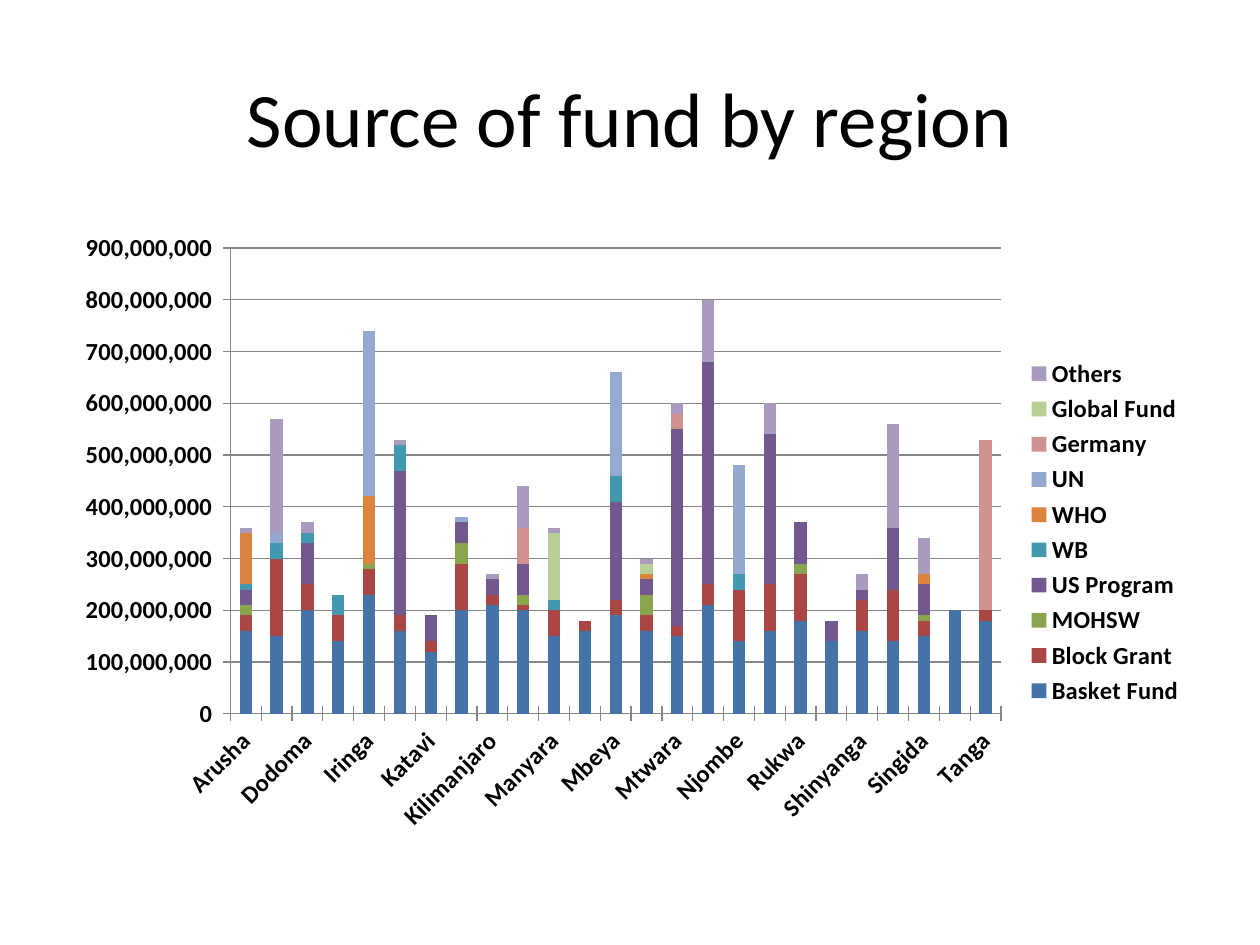
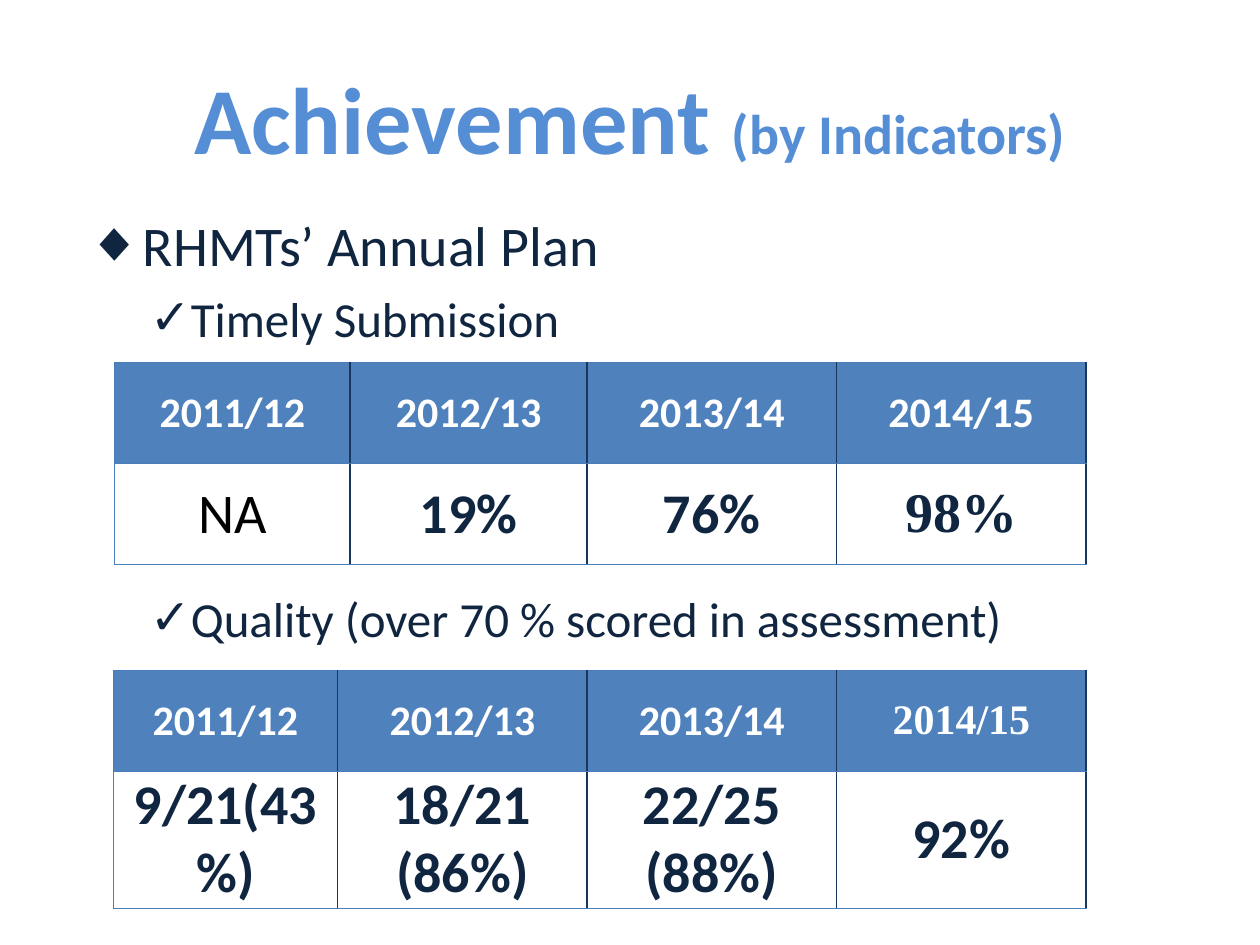
from lxml import etree
from pptx import Presentation
from pptx.chart.data import CategoryChartData
from pptx.dml.color import RGBColor
from pptx.enum.chart import XL_CHART_TYPE, XL_LEGEND_POSITION, XL_TICK_MARK
from pptx.enum.text import MSO_ANCHOR, MSO_AUTO_SIZE, PP_ALIGN
from pptx.oxml.ns import qn
from pptx.util import Emu, Pt

STACKED = XL_CHART_TYPE.COLUMN_STACKED
RIGHT = XL_LEGEND_POSITION.RIGHT
CROSS = XL_TICK_MARK.CROSS
MIDDLE = MSO_ANCHOR.MIDDLE
NO_AUTOFIT = MSO_AUTO_SIZE.NONE
CENTER = PP_ALIGN.CENTER

PX = 9144  # 100 px to the inch
SANS, SERIF = "Calibri", "Times New Roman"
COLORS = {
    "black": "000000", "white": "FFFFFF", "navy": "10253F", "sky": "558ED5",
    "header": "4F81BD", "edge": "4A7EBB", "divider": "17375E", "grid": "868686",
    "Basket Fund": "4572A7", "Block Grant": "AA4643", "MOHSW": "89A54E",
    "US Program": "71588F", "WB": "4198AF", "WHO": "DB843D", "UN": "93A9CF",
    "Germany": "D19392", "Global Fund": "B9CD96", "Others": "A99BBD",
}


def place(box, left, top, width, height):
    box.left, box.top, box.width, box.height = (
        Emu(n * PX) for n in (left, top, width, height))


def add_span(para, text, size, color, bold=False, font=SANS):
    span = para.add_run()
    span.text = text
    span.font.size = Pt(size)
    span.font.bold = bold
    span.font.name = font
    span.font.color.rgb = RGBColor.from_string(COLORS[color])


deck = Presentation()
deck.slide_width, deck.slide_height = Emu(1000 * PX), Emu(750 * PX)

# Both pages share the title position; only the spans differ.
page_titles = [
    ("Title Only", [("Source of fund by region", 44, "black", False)]),
    ("Title and Content", [("Achievement ", 54, "sky", True),
                           ("(by Indicators)", 32, "sky", True)]),
]
pages = []
for layout, spans in page_titles:
    page = deck.slides.add_slide(deck.slide_layouts.get_by_name(layout))
    title = page.shapes.title
    place(title, 50, 30, 900, 125)
    title.text_frame.vertical_anchor = MIDDLE
    title.text_frame.auto_size = NO_AUTOFIT
    para = title.text_frame.paragraphs[0]
    para.alignment = CENTER
    for span in spans:
        add_span(para, *span)
    pages.append(page)
fund_page, achievement_page = pages

# Funding in millions; a region without an entry received nothing from that fund.
MILLION = 1_000_000
regions = [
    "Arusha", "Dar es Salaam", "Dodoma", "Geita", "Iringa", "Kagera", "Katavi",
    "Kigoma", "Kilimanjaro", "Lindi", "Manyara", "Mara", "Mbeya", "Morogoro",
    "Mtwara", "Mwanza", "Njombe", "Pwani", "Rukwa", "Ruvuma", "Shinyanga",
    "Simiyu", "Singida", "Tabora", "Tanga",
]
# Each fund lists its amounts with the regions that received them.
funds = {
    "Basket Fund": {
        120: ["Katavi"],
        140: ["Geita", "Njombe", "Ruvuma", "Simiyu"],
        150: ["Dar es Salaam", "Manyara", "Mtwara", "Singida"],
        160: ["Arusha", "Kagera", "Mara", "Morogoro", "Pwani", "Shinyanga"],
        180: ["Rukwa", "Tanga"],
        190: ["Mbeya"],
        200: ["Dodoma", "Kigoma", "Lindi", "Tabora"],
        210: ["Kilimanjaro", "Mwanza"],
        230: ["Iringa"],
    },
    "Block Grant": {
        10: ["Lindi"],
        20: ["Katavi", "Kilimanjaro", "Mara", "Mtwara", "Tanga"],
        30: ["Arusha", "Kagera", "Mbeya", "Morogoro", "Singida"],
        40: ["Mwanza"],
        50: ["Dodoma", "Geita", "Iringa", "Manyara"],
        60: ["Shinyanga"],
        90: ["Kigoma", "Pwani", "Rukwa"],
        100: ["Njombe", "Simiyu"],
        150: ["Dar es Salaam"],
    },
    "MOHSW": {
        10: ["Iringa", "Singida"],
        20: ["Arusha", "Lindi", "Rukwa"],
        40: ["Kigoma", "Morogoro"],
    },
    "US Program": {
        20: ["Shinyanga"],
        30: ["Arusha", "Kilimanjaro", "Morogoro"],
        40: ["Kigoma", "Ruvuma"],
        50: ["Katavi"],
        60: ["Lindi", "Singida"],
        80: ["Dodoma", "Rukwa"],
        120: ["Simiyu"],
        190: ["Mbeya"],
        280: ["Kagera"],
        290: ["Pwani"],
        380: ["Mtwara"],
        430: ["Mwanza"],
    },
    "WB": {
        10: ["Arusha"],
        20: ["Dodoma", "Manyara"],
        30: ["Dar es Salaam", "Njombe"],
        40: ["Geita"],
        50: ["Kagera", "Mbeya"],
    },
    "WHO": {10: ["Morogoro"], 20: ["Singida"], 100: ["Arusha"], 130: ["Iringa"]},
    "UN": {10: ["Kigoma"], 20: ["Dar es Salaam"], 200: ["Mbeya"],
           210: ["Njombe"], 320: ["Iringa"]},
    "Germany": {30: ["Mtwara"], 70: ["Lindi"], 330: ["Tanga"]},
    "Global Fund": {20: ["Morogoro"], 130: ["Manyara"]},
    "Others": {
        10: ["Arusha", "Kagera", "Kilimanjaro", "Manyara", "Morogoro"],
        20: ["Dodoma", "Mtwara"],
        30: ["Shinyanga"],
        60: ["Pwani"],
        70: ["Singida"],
        80: ["Lindi"],
        120: ["Mwanza"],
        200: ["Simiyu"],
        220: ["Dar es Salaam"],
    },
}
fund_data = CategoryChartData()
fund_data.categories = regions
for name, receivers in funds.items():
    amounts = {region: amount for amount, group in receivers.items() for region in group}
    fund_data.add_series(name, [amounts.get(region, 0) * MILLION for region in regions])
chart_area = [Emu(n * PX) for n in (50, 175, 900, 495)]
chart = fund_page.shapes.add_chart(STACKED, *chart_area, fund_data).chart
chart.has_title = False
chart.font.name = SANS
chart.font.size = Pt(10)
chart.font.color.rgb = RGBColor.from_string(COLORS["black"])

plot = chart.plots[0]
plot.vary_by_categories = False
plot.gap_width, plot.overlap = 150, 100
for series in plot.series:
    series.format.fill.solid()
    series.format.fill.fore_color.rgb = RGBColor.from_string(COLORS[series.name])

chart.has_legend = True
chart.legend.position = RIGHT
chart.legend.include_in_layout = False
region_axis, amount_axis = chart.category_axis, chart.value_axis
amount_axis.has_major_gridlines = True
amount_axis.minimum_scale = 0
amount_axis.maximum_scale = 900 * MILLION
amount_axis.major_unit = 100 * MILLION
amount_axis.tick_labels.number_format = "#,##0_ "
amount_axis.tick_labels.number_format_is_linked = False
for axis in (region_axis, amount_axis):
    axis.major_tick_mark = CROSS
for line in (region_axis.format.line, amount_axis.format.line,
             amount_axis.major_gridlines.format.line):
    line.color.rgb = RGBColor.from_string(COLORS["grid"])
    line.width = Pt(0.75)
for font in (region_axis.tick_labels.font, amount_axis.tick_labels.font,
             chart.legend.font):
    font.size, font.bold, font.name = Pt(14), True, SANS
    font.color.rgb = RGBColor.from_string(COLORS["black"])
region_axis._element.txPr.bodyPr.set("rot", "-2700000")

# Indicator list; the space before the last item leaves room for the first table
body = achievement_page.placeholders[1]
place(body, 59, 162, 900, 508)
body.text_frame.auto_size = NO_AUTOFIT
level_styles = [(32, "◆", 38, 38), (28, "✓", 81, 31)]  # size, bullet, margin, hang
indicators = [
    ("RHMTs’ Annual Plan", 0, 6),
    ("Timely Submission", 1, 6),
    ("Quality (over 70 % scored in assessment)", 1, 138),
]
for i, (text, level, gap) in enumerate(indicators):
    size, bullet, margin, hang = level_styles[level]
    para = body.text_frame.add_paragraph() if i else body.text_frame.paragraphs[0]
    para.level = level
    para.space_before = Pt(gap)
    props = para._p.get_or_add_pPr()
    props.set("marL", str(margin * PX))
    props.set("indent", str(-hang * PX))
    etree.SubElement(props, qn("a:buFont"), typeface="Arial")
    etree.SubElement(props, qn("a:buChar"), char=bullet)
    add_span(para, text, size, "navy")

# Each table: left, top, first two column widths, result row height, results, serif text
YEAR_WIDTH, YEAR_HEIGHT, INSET = 198, 80, 8
years = ["2011/12", "2012/13", "2013/14", "2014/15"]
indicator_tables = [
    (90, 532, [178, YEAR_WIDTH], 107,
     ["9/21(43%)", "18/21 (86%)", "22/25 (88%)", "92%"], "2014/15"),
    (91, 288, [187, 188], YEAR_HEIGHT, ["NA", "19%", "76%", "98%"], "98%"),
]
for left, top, first_widths, result_height, results, serif_text in indicator_tables:
    widths = first_widths + [YEAR_WIDTH] * 2
    heights = [YEAR_HEIGHT, result_height]
    area = [Emu(n * PX) for n in (left, top, sum(widths), sum(heights))]
    table = achievement_page.shapes.add_table(len(heights), len(years), *area).table
    table.horz_banding = False
    for column, width in zip(table.columns, widths):
        column.width = Emu(width * PX)
    for row, height in zip(table.rows, heights):
        row.height = Emu(height * PX)
    for r, texts in enumerate((years, results)):
        for c, text in enumerate(texts):
            cell = table.cell(r, c)
            cell.vertical_anchor = MIDDLE
            cell.margin_left = cell.margin_right = Emu(INSET * PX)
            cell.margin_top = cell.margin_bottom = 0
            para = cell.text_frame.paragraphs[0]
            para.alignment = CENTER
            missing = text == "NA"
            color = "white" if r == 0 else "black" if missing else "navy"
            add_span(para, text, 32 if r else 24, color, not missing,
                     SERIF if text == serif_text else SANS)
            borders = [("L", "divider" if c else "edge"), ("R", "divider"),
                       ("T", "edge"), ("B", "edge")]
            for side, color in borders:
                width = Pt(1) if color == "divider" else Pt(0.75)
                border = etree.SubElement(cell._tc.get_or_add_tcPr(),
                                          qn(f"a:ln{side}"), w=str(int(width)))
                fill = etree.SubElement(border, qn("a:solidFill"))
                etree.SubElement(fill, qn("a:srgbClr"), val=COLORS[color])
            if r == 0:
                cell.fill.solid()
                cell.fill.fore_color.rgb = RGBColor.from_string(COLORS["header"])
            else:
                cell.fill.background()

deck.save("out.pptx")
